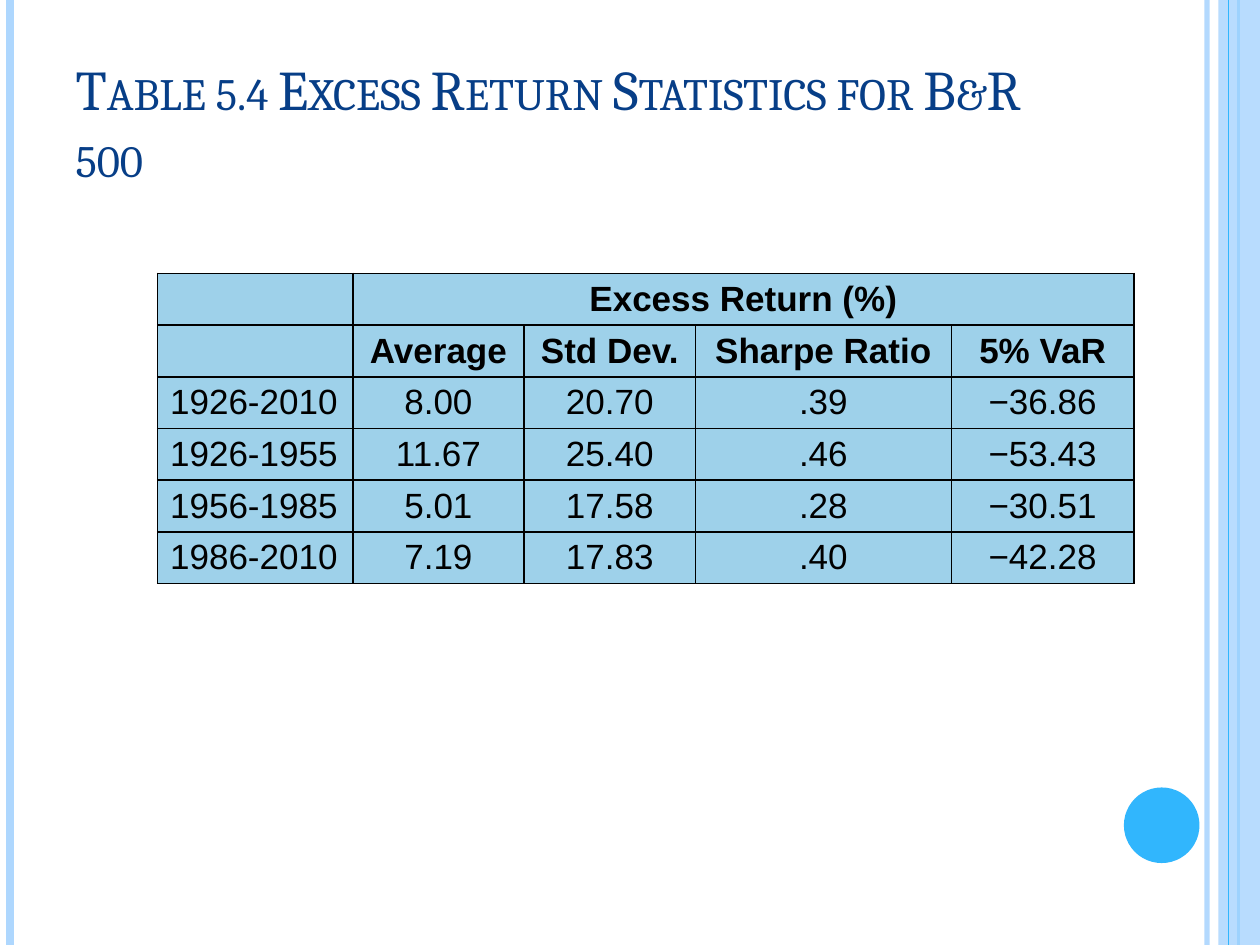
"""Build a slide with a table of excess return statistics for a stock index."""
from lxml.etree import SubElement
from pptx import Presentation
from pptx.dml.color import RGBColor
from pptx.enum.shapes import MSO_CONNECTOR, MSO_SHAPE
from pptx.enum.text import MSO_ANCHOR, MSO_AUTO_SIZE, PP_ALIGN
from pptx.oxml.ns import qn
from pptx.util import Inches, Pt

PALE_BLUE = RGBColor(0xAE, 0xD7, 0xFE)
BRIGHT_BLUE = RGBColor(0x31, 0xB6, 0xFD)
TITLE_BLUE = RGBColor(0x07, 0x3E, 0x87)
CELL_BLUE = RGBColor(0x9E, 0xD1, 0xEA)
BLACK = RGBColor(0, 0, 0)

COLUMN_WIDTHS = [1.55, 1.36, 1.36, 2.03, 1.45]
ROW_HEIGHT = 0.41
ROWS = [
    ["", "Excess Return (%)", "", "", ""],
    ["", "Average", "Std Dev.", "Sharpe Ratio", "5% VaR"],
    ["1926-2010", "8.00", "20.70", ".39", "−36.86"],
    ["1926-1955", "11.67", "25.40", ".46", "−53.43"],
    ["1956-1985", "5.01", "17.58", ".28", "−30.51"],
    ["1986-2010", "7.19", "17.83", ".40", "−42.28"],
]


def set_opacity(properties, percent):
    color = next(properties.iter(qn("a:srgbClr")))
    SubElement(color, qn("a:alpha"), val=str(percent * 1000))


def add_borders(cell):
    properties = cell._tc.get_or_add_tcPr()
    for position, side in enumerate(("a:lnL", "a:lnR", "a:lnT", "a:lnB")):
        border = SubElement(properties, qn(side), w=str(Pt(1)))
        fill = SubElement(border, qn("a:solidFill"))
        SubElement(fill, qn("a:srgbClr"), val=str(BLACK))
        properties.insert(position, border)


presentation = Presentation()
presentation.slide_width = Inches(10)
presentation.slide_height = Inches(7.5)
slide = presentation.slides.add_slide(presentation.slide_layouts[5])
shapes = slide.shapes

bands = []
for x, width, color, opacity in [
    (9.58, 3, PALE_BLUE, 93),
    (0.08, 4.5, PALE_BLUE, 100),
    (9.83, 1.5, BRIGHT_BLUE, 100),
    (9.75, 0.75, BRIGHT_BLUE, 100),
]:
    line = shapes.add_connector(
        MSO_CONNECTOR.STRAIGHT, Inches(x), Inches(0), Inches(x), Inches(7.5)
    )
    line.line.width = Pt(width)
    line.line.color.rgb = color
    properties = line._element.spPr
    SubElement(properties, qn("a:effectLst"))
    if opacity < 100:
        set_opacity(properties, opacity)
    bands.append(line)

for kind, left, top, width, height, color in [
    (MSO_SHAPE.RECTANGLE, 9.67, 0, 0.33, 7.5, PALE_BLUE),
    (MSO_SHAPE.OVAL, 8.92, 6.25, 0.6, 0.6, BRIGHT_BLUE),
]:
    shape = shapes.add_shape(
        kind, Inches(left), Inches(top), Inches(width), Inches(height)
    )
    shape.shadow.inherit = False
    shape.fill.solid()
    shape.fill.fore_color.rgb = color
    shape.line.fill.background()
    if kind == MSO_SHAPE.RECTANGLE:
        set_opacity(shape._element.spPr, 87)
        bands[-1]._element.addprevious(shape._element)

title = shapes.title
title.left, title.top = Inches(0.5), Inches(0.3)
title.width, title.height = Inches(8.17), Inches(1.25)
title_frame = title.text_frame
title_frame.word_wrap = True
title_frame.auto_size = MSO_AUTO_SIZE.NONE
title_frame.vertical_anchor = MSO_ANCHOR.BOTTOM
paragraph = title_frame.paragraphs[0]
paragraph.alignment = PP_ALIGN.LEFT
run = paragraph.add_run()
run.text = "Table 5.4 Excess Return Statistics for B&R 500"
run.font.name = "Cambria"
run.font.size = Pt(32)
run.font.color.rgb = TITLE_BLUE
run._r.get_or_add_rPr().set("cap", "small")

table = shapes.add_table(
    len(ROWS), len(COLUMN_WIDTHS), Inches(1.25), Inches(2.17),
    Inches(sum(COLUMN_WIDTHS)), Inches(ROW_HEIGHT * len(ROWS)),
).table
for column, width in zip(table.columns, COLUMN_WIDTHS):
    column.width = Inches(width)
for row in table.rows:
    row.height = Inches(ROW_HEIGHT)
table.cell(0, 1).merge(table.cell(0, 4))

for row_index, row in enumerate(ROWS):
    for column_index, text in enumerate(row):
        cell = table.cell(row_index, column_index)
        cell.fill.solid()
        cell.fill.fore_color.rgb = CELL_BLUE
        add_borders(cell)
        if text:
            paragraph = cell.text_frame.paragraphs[0]
            paragraph.alignment = PP_ALIGN.CENTER if column_index else PP_ALIGN.LEFT
            run = paragraph.add_run()
            run.text = text
            run.font.name = "Arial"
            run.font.size = Pt(20)
            run.font.bold = row_index < 2
            run.font.color.rgb = BLACK

presentation.save("out.pptx")
